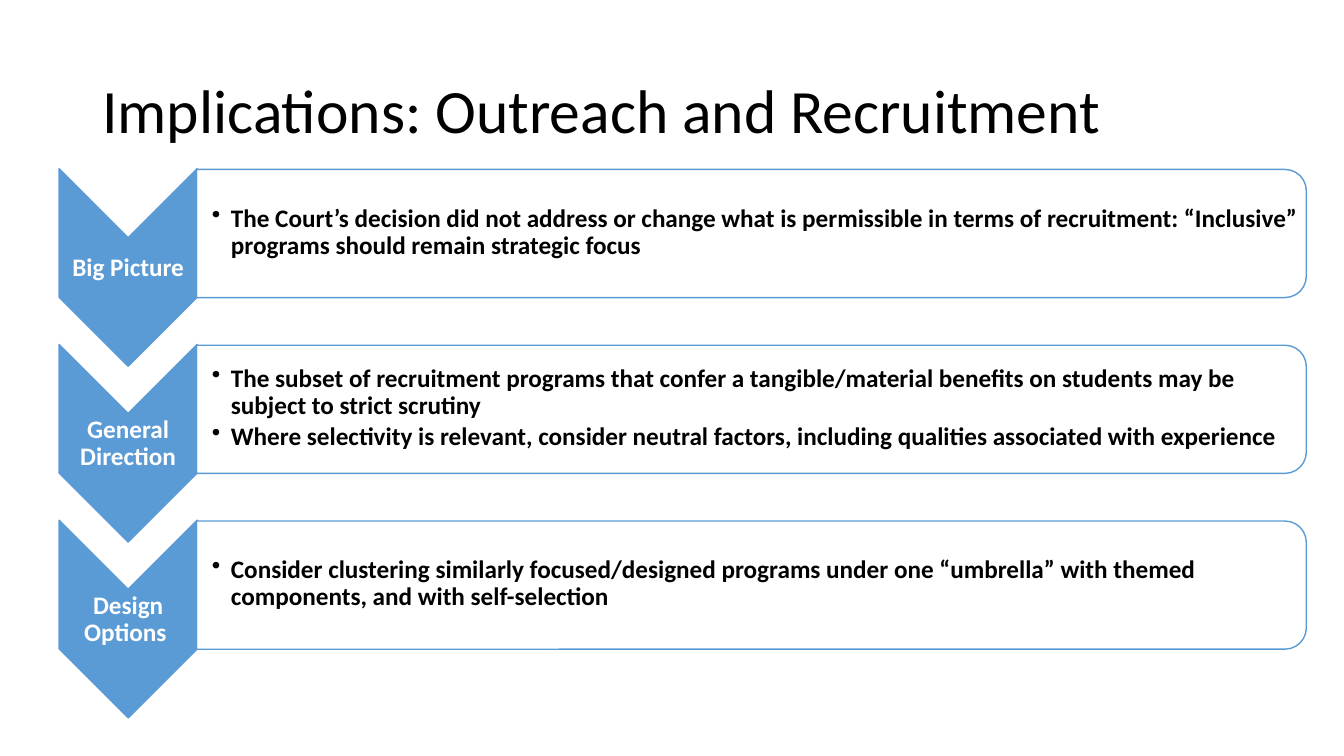
"""Build the outreach and recruitment slide: three chevrons with bullet panels."""
from lxml import etree
from pptx import Presentation, util as u
from pptx.dml import color
from pptx.enum import shapes, text
from pptx.oxml import ns

BLUE, WHITE, BLACK = "5B9BD5", "FFFFFF", "000000"
ROW_PITCH = 4.43
ROWS = [
    ("Big Picture", [
        "The Court’s decision did not address or change what is permissible in terms of "
        "recruitment: “Inclusive” programs should remain strategic focus"]),
    ("General Direction", [
        "The subset of recruitment programs that confer a tangible/material benefits on "
        "students may be subject to strict scrutiny",
        "Where selectivity is relevant, consider neutral factors, including qualities "
        "associated with experience"]),
    ("Design Options ", [
        "Consider clustering similarly focused/designed programs under one “umbrella” "
        "with themed components, and with self-selection"]),
]

presentation = Presentation()
presentation.slide_width, presentation.slide_height = u.Cm(33.87), u.Cm(19.05)
slide = presentation.slides.add_slide(presentation.slide_layouts[6])


def add_turned_shape(kind, box, fill):
    """Add a preset shape turned a quarter clockwise, with a blue outline."""
    shape = slide.shapes.add_shape(kind, *map(u.Cm, box))
    shape.rotation = 90
    shape.shadow.inherit = False
    shape.fill.solid()
    shape.fill.fore_color.rgb = color.RGBColor.from_string(fill)
    shape.line.color.rgb = color.RGBColor.from_string(BLUE)
    shape.line.width = u.Pt(1)
    return shape


def add_text(box, lines, size, ink, bold, insets, space_after=0):
    """Add a wrapped, vertically centred text box and return its paragraphs."""
    frame = slide.shapes.add_textbox(*map(u.Cm, box)).text_frame
    frame.word_wrap = True
    frame.vertical_anchor = text.MSO_ANCHOR.MIDDLE
    frame.margin_left, frame.margin_top, frame.margin_right, frame.margin_bottom = map(u.Cm, insets)
    for number, line in enumerate(lines):
        paragraph = frame.add_paragraph() if number else frame.paragraphs[0]
        paragraph.line_spacing = 0.9
        paragraph.space_after = u.Pt(space_after)
        run = paragraph.add_run()
        run.text = line
        run.font.name = "Calibri"
        run.font.size = u.Pt(size)
        run.font.bold = bold
        run.font.color.rgb = color.RGBColor.from_string(ink)
    return frame.paragraphs


add_text((2.33, 1.01, 29.21, 3.68), ["Implications: Outreach and Recruitment"],
         44, BLACK, False, (0.25, 0.13, 0.25, 0.13))

for index, (label, bullets) in enumerate(ROWS):
    offset = index * ROW_PITCH
    add_turned_shape(shapes.MSO_SHAPE.CHEVRON, (0.74, 5 + offset, 4.98, 3.48), BLUE)
    for paragraph in add_text((1.49, 6 + offset, 3.48, 1.5), [label], 18, WHITE, True,
                              (0.03, 0.03, 0.03, 0.03), 6.3):
        paragraph.alignment = text.PP_ALIGN.CENTER

    panel = add_turned_shape(shapes.MSO_SHAPE.ROUND_2_SAME_RECTANGLE,
                             (17.32, -8.1 + offset, 3.23, 27.97), WHITE)
    panel_color = panel.fill._xPr.find(ns.qn("a:solidFill"))[0]
    etree.SubElement(panel_color, ns.qn("a:alpha"), val="90000")
    for paragraph in add_text((4.98, 4.4 + offset, 27.79, 2.92), bullets, 18, BLACK, True,
                              (0.36, 0.03, 0.03, 0.03), 2.7):
        properties = paragraph._p.get_or_add_pPr()
        properties.set("marL", str(u.Cm(0.48)))
        properties.set("indent", str(-u.Cm(0.48)))
        etree.SubElement(properties, ns.qn("a:buChar"), char="•")

presentation.save("out.pptx")
